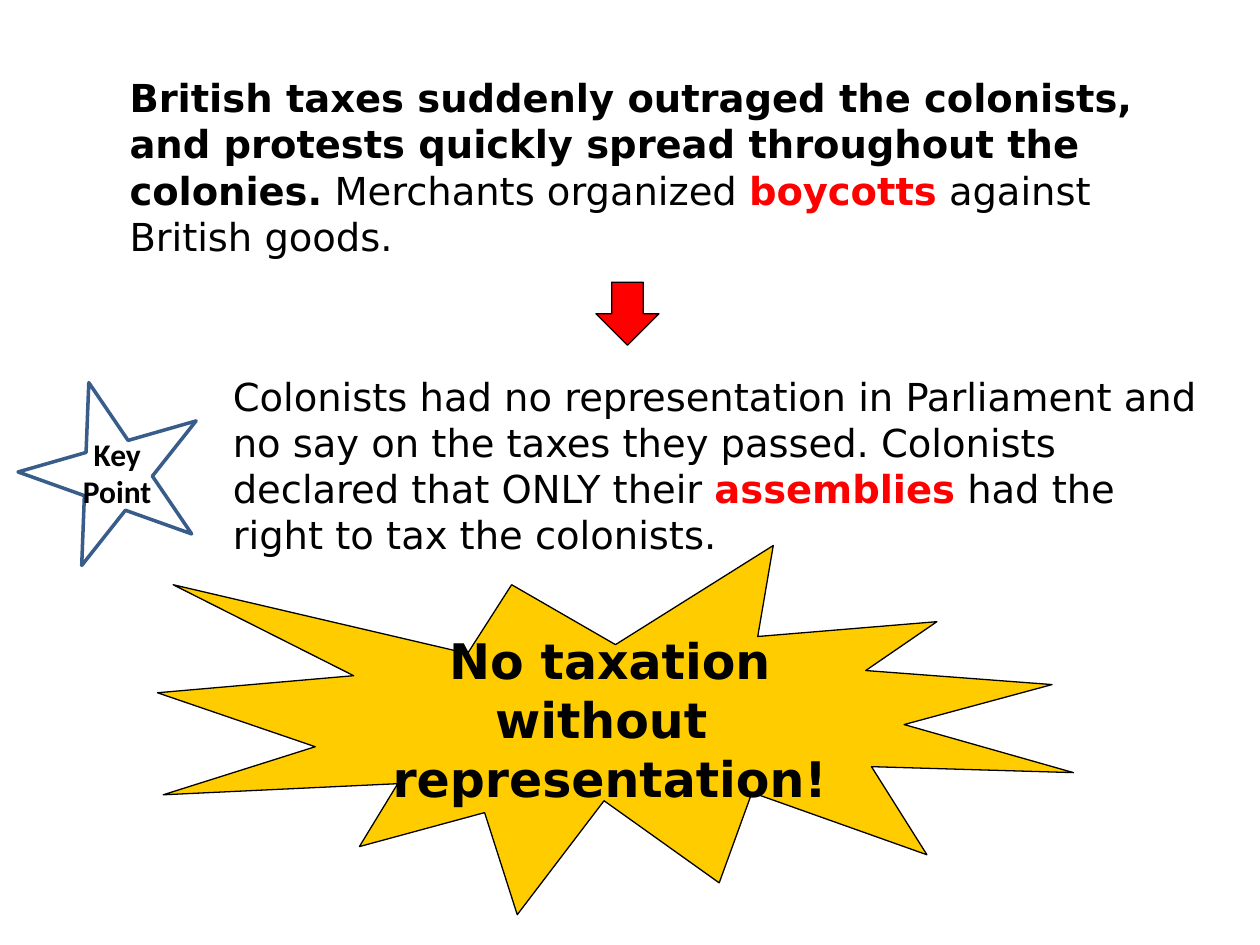
from dataclasses import dataclass

from pptx import Presentation
from pptx.dml.color import RGBColor
from pptx.enum.shapes import MSO_SHAPE
from pptx.enum.text import MSO_ANCHOR, PP_ALIGN
from pptx.util import Inches, Pt

DOWN_ARROW = MSO_SHAPE.DOWN_ARROW
STAR = MSO_SHAPE.STAR_5_POINT
BURST = MSO_SHAPE.EXPLOSION1
LEFT, CENTER = PP_ALIGN.LEFT, PP_ALIGN.CENTER
TOP, MIDDLE = MSO_ANCHOR.TOP, MSO_ANCHOR.MIDDLE

BLACK = RGBColor(0x00, 0x00, 0x00)
RED = RGBColor(0xFF, 0x00, 0x00)
GOLD = RGBColor(0xFF, 0xCC, 0x00)
BLUE = RGBColor(0x38, 0x5D, 0x8A)

BODY_FONT = "DejaVu Sans"
LABEL_FONT = "Calibri"
BLANK_LAYOUT = 6


@dataclass(frozen=True)
class Box:
    left: float
    top: float
    width: float
    height: float

    def lengths(self):
        return [Inches(n) for n in (self.left, self.top, self.width, self.height)]


@dataclass(frozen=True)
class Run:
    text: str
    bold: bool = False
    color: RGBColor = BLACK


def write(shape, *paragraphs: list[Run], font=BODY_FONT, size=22,
          align=LEFT, anchor=TOP):
    frame = shape.text_frame
    frame.word_wrap = True
    frame.vertical_anchor = anchor
    for index, runs in enumerate(paragraphs):
        paragraph = frame.add_paragraph() if index else frame.paragraphs[0]
        paragraph.alignment = align
        for item in runs:
            run = paragraph.add_run()
            run.text = item.text
            run.font.name = font
            run.font.size = Pt(size)
            run.font.bold = item.bold
            run.font.color.rgb = item.color


def add_text(slide, box: Box, *paragraphs: list[Run], **text_format):
    write(slide.shapes.add_textbox(*box.lengths()), *paragraphs, **text_format)


def add_figure(slide, kind, box: Box, fill=None, line=BLACK, width=0.75, rotation=0):
    shape = slide.shapes.add_shape(kind, *box.lengths())
    shape.shadow.inherit = False
    shape.rotation = rotation
    if fill is None:
        shape.fill.background()
    else:
        shape.fill.solid()
        shape.fill.fore_color.rgb = fill
    shape.line.color.rgb = line
    shape.line.width = Pt(width)
    return shape


def main():
    presentation = Presentation()
    presentation.slide_width = Inches(10)
    presentation.slide_height = Inches(7.5)
    slide = presentation.slides.add_slide(presentation.slide_layouts[BLANK_LAYOUT])

    add_text(slide, Box(0.93, 0.54, 8.24, 1.95), [
        Run("British taxes suddenly outraged the colonists, and protests "
            "quickly spread throughout the colonies.", bold=True),
        Run(" Merchants organized "),
        Run("boycotts", bold=True, color=RED),
        Run(" against British goods."),
    ])
    add_text(slide, Box(1.75, 2.91, 8, 1.58), [
        Run("Colonists had no representation in Parliament and no say on the "
            "taxes they passed. Colonists declared that ONLY their "),
        Run("assemblies", bold=True, color=RED),
        Run(" had the right to tax the colonists."),
    ])

    add_figure(slide, DOWN_ARROW, Box(4.73, 2.24, 0.5, 0.5), fill=RED)
    add_figure(slide, STAR, Box(0.16, 3.01, 1.47, 1.38),
               line=BLUE, width=2, rotation=344)
    add_text(slide, Box(0.44, 3.4, 0.98, 0.71), [Run("Key Point", bold=True)],
             font=LABEL_FONT, size=18, align=CENTER)

    slogan = add_figure(slide, BURST, Box(1.25, 4.33, 7.27, 2.93), fill=GOLD)
    write(slogan,
          [Run("No taxation without ", bold=True)],
          [Run("representation!", bold=True)],
          size=28, align=CENTER, anchor=MIDDLE)

    presentation.save("out.pptx")


if __name__ == "__main__":
    main()
